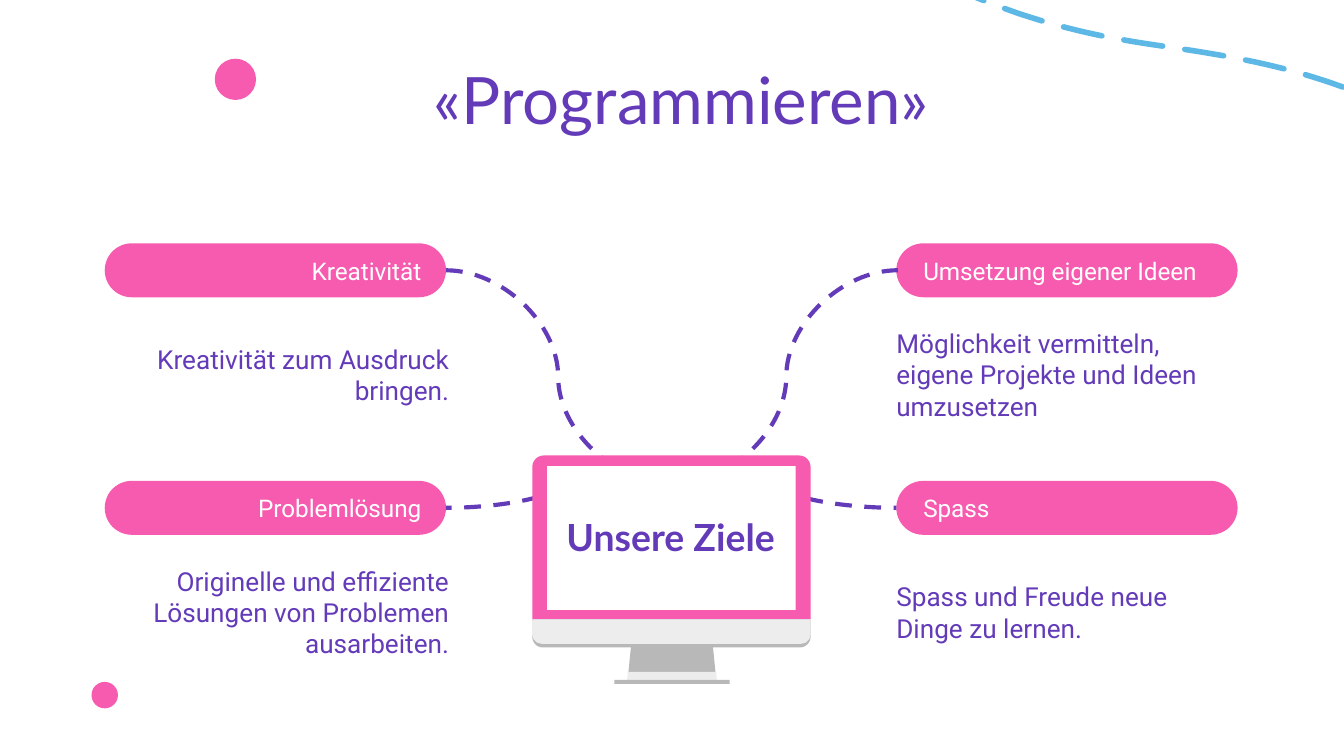
from dataclasses import dataclass
from itertools import pairwise

from lxml.etree import SubElement
from pptx import Presentation
from pptx.dml.color import RGBColor
from pptx.enum.dml import MSO_LINE
from pptx.enum.shapes import MSO_CONNECTOR, MSO_SHAPE
from pptx.enum.text import MSO_ANCHOR, PP_ALIGN
from pptx.oxml.ns import qn
from pptx.util import Cm, Pt

PINK, PURPLE, BLUE = "F75BAF", "633BB9", "5EB8E6"
WHITE, PALE, GREY = "FFFFFF", "EDEDED", "B8B8B8"
LEFT, MID, RIGHT = PP_ALIGN.LEFT, PP_ALIGN.CENTER, PP_ALIGN.RIGHT
PILL_W, PILL_H = 6.45, 1.02
BODY_W, BODY_H = 6.73, 2.92
INSET = 0.25


@dataclass
class Box:
    left: float
    top: float
    width: float
    height: float


@dataclass
class Part:
    kind: MSO_SHAPE
    box: Box
    fill: str
    bends: tuple[float, ...] = ()


@dataclass
class Goal:
    side: PP_ALIGN
    top: float
    label: str
    width: float
    body: str


@dataclass
class Link:
    start: tuple[float, float]
    end: tuple[float, float]


GOALS = [
    Goal(RIGHT, 4.6, "Kreativität", 4.93, "Kreativität zum Ausdruck bringen."),
    Goal(LEFT, 4.6, "Umsetzung eigener Ideen", 5.72,
         "Möglichkeit vermitteln, eigene Projekte und Ideen umzusetzen"),
    Goal(RIGHT, 9.09, "Problemlösung", 4.93,
         "Originelle und effiziente Lösungen von Problemen ausarbeiten."),
    Goal(LEFT, 9.09, "Spass", 4.93, "Spass und Freude neue Dinge zu lernen."),
]

LINKS = [
    Link((12.75, 9.14), (16.97, 5.11)),
    Link((12.65, 8.76), (16.94, 9.6)),
    Link((8.43, 5.11), (12.67, 9.14)),
    Link((12.75, 8.69), (8.43, 9.6)),
]

DOTS = [
    Part(MSO_SHAPE.OVAL, Box(4.06, 1.11, 0.78, 0.78), PINK),
    Part(MSO_SHAPE.OVAL, Box(1.73, 12.89, 0.5, 0.5), PINK),
]

SCREEN = [
    Part(MSO_SHAPE.ROUND_2_SAME_RECTANGLE, Box(10.06, 8.61, 5.26, 3.1), PINK, (0.07, 0)),
    Part(MSO_SHAPE.RECTANGLE, Box(10.34, 8.81, 4.7, 2.72), WHITE),
    Part(MSO_SHAPE.TRAPEZOID, Box(11.86, 12.09, 1.68, 0.79), GREY, (0.1,)),
    Part(MSO_SHAPE.RECTANGLE, Box(11.86, 12.7, 1.68, 0.18), PALE),
    Part(MSO_SHAPE.RECTANGLE, Box(11.61, 12.85, 2.18, 0.08), GREY),
    Part(MSO_SHAPE.ROUND_2_SAME_RECTANGLE, Box(10.06, 11.71, 5.26, 0.53), GREY, (0, 0.38)),
    Part(MSO_SHAPE.ROUND_2_SAME_RECTANGLE, Box(10.06, 11.71, 5.26, 0.46), PALE, (0, 0.38)),
]

WAVE = [(17.91, -0.28), (19.46, 0.43), (20.7, 0.69), (21.89, 0.86),
        (23.11, 1.04), (24.31, 1.22), (25.65, 1.75)]


def hue(code: str) -> RGBColor:
    return RGBColor.from_string(code)


def frame(box: Box) -> tuple[Cm, ...]:
    return Cm(box.left), Cm(box.top), Cm(box.width), Cm(box.height)


def draw_part(shapes, part: Part) -> None:
    shape = shapes.add_shape(part.kind, *frame(part.box))
    shape.shadow.inherit = False
    shape.fill.solid()
    shape.fill.fore_color.rgb = hue(part.fill)
    shape.line.fill.background()
    for index, bend in enumerate(part.bends):
        shape.adjustments[index] = bend


def draw_text(shapes, text: str, box: Box, size: float, tint: str, side: PP_ALIGN,
              font: str = "Roboto", bold: bool = False,
              anchor: MSO_ANCHOR = MSO_ANCHOR.MIDDLE) -> None:
    area = shapes.add_textbox(*frame(box)).text_frame
    area.word_wrap = True
    area.vertical_anchor = anchor
    area.margin_left = area.margin_right = Cm(INSET)
    area.margin_top = area.margin_bottom = Cm(INSET)
    area.text = text
    line = area.paragraphs[0]
    line.alignment = side
    face = line.runs[0].font
    face.name, face.size, face.bold = font, Pt(size), bold
    face.color.rgb = hue(tint)


def set_line(line, tint: str, width: float, dash: MSO_LINE) -> None:
    line.color.rgb = hue(tint)
    line.width = Pt(width)
    line.dash_style = dash


def draw_link(shapes, link: Link) -> None:
    ends = [Cm(value) for value in (*link.start, *link.end)]
    curve = shapes.add_connector(MSO_CONNECTOR.CURVE, *ends)
    set_line(curve.line, PURPLE, 2.25, MSO_LINE.DASH)
    SubElement(curve.element.spPr, qn("a:effectLst"))


def bend_points(knots: list[tuple[float, float]], steps: int = 24):
    for first, last in pairwise(range(0, len(knots), 3)):
        four = knots[first:last + 1]
        for step in range(1, steps + 1):
            t = step / steps
            u = 1 - t
            parts = (u ** 3, 3 * u * u * t, 3 * u * t * t, t ** 3)
            yield tuple(Cm(sum(part * knot[axis] for part, knot in zip(parts, four)))
                        for axis in (0, 1))


def draw_wave(shapes, knots: list[tuple[float, float]]) -> None:
    path = shapes.build_freeform(Cm(knots[0][0]), Cm(knots[0][1]))
    path.add_line_segments(list(bend_points(knots)), close=False)
    wave = path.convert_to_shape()
    wave.shadow.inherit = False
    wave.fill.background()
    set_line(wave.line, BLUE, 3, MSO_LINE.LONG_DASH)
    wave.element.spPr.find(qn("a:ln")).set("cap", "rnd")


def draw_goal(shapes, goal: Goal) -> None:
    if goal.side == RIGHT:
        label_x, body_x = 8.21 - goal.width, 2.01
    else:
        label_x, body_x = 17.2, 16.69
    label = Box(label_x, goal.top, goal.width, PILL_H)
    body = Box(body_x, goal.top + PILL_H, BODY_W, BODY_H)
    draw_text(shapes, goal.label, label, 13, WHITE, goal.side)
    draw_text(shapes, goal.body, body, 14, PURPLE, goal.side)


def main() -> None:
    deck = Presentation()
    deck.slide_width, deck.slide_height = Cm(25.4), Cm(14.29)
    shapes = deck.slides.add_slide(deck.slide_layouts[6]).shapes

    for dot in DOTS:
        draw_part(shapes, dot)
    draw_wave(shapes, WAVE)
    draw_text(shapes, "«Programmieren»", Box(2.16, 0.86, 21.44, 1.6), 35, PURPLE, MID,
              font="Lato", anchor=MSO_ANCHOR.TOP)
    for goal in GOALS:
        left = 1.98 if goal.side == RIGHT else 16.94
        pill = Box(left, goal.top, PILL_W, PILL_H)
        draw_part(shapes, Part(MSO_SHAPE.ROUNDED_RECTANGLE, pill, PINK, (0.5,)))
    for link in LINKS:
        draw_link(shapes, link)
    group = shapes.add_group_shape()
    for part in SCREEN:
        draw_part(group.shapes, part)
    for goal in GOALS:
        draw_goal(shapes, goal)
    draw_text(shapes, "Unsere Ziele", Box(10.21, 8.81, 4.93, 2.67), 20, PURPLE, MID,
              font="Lato", bold=True)
    deck.save("out.pptx")


if __name__ == "__main__":
    main()
